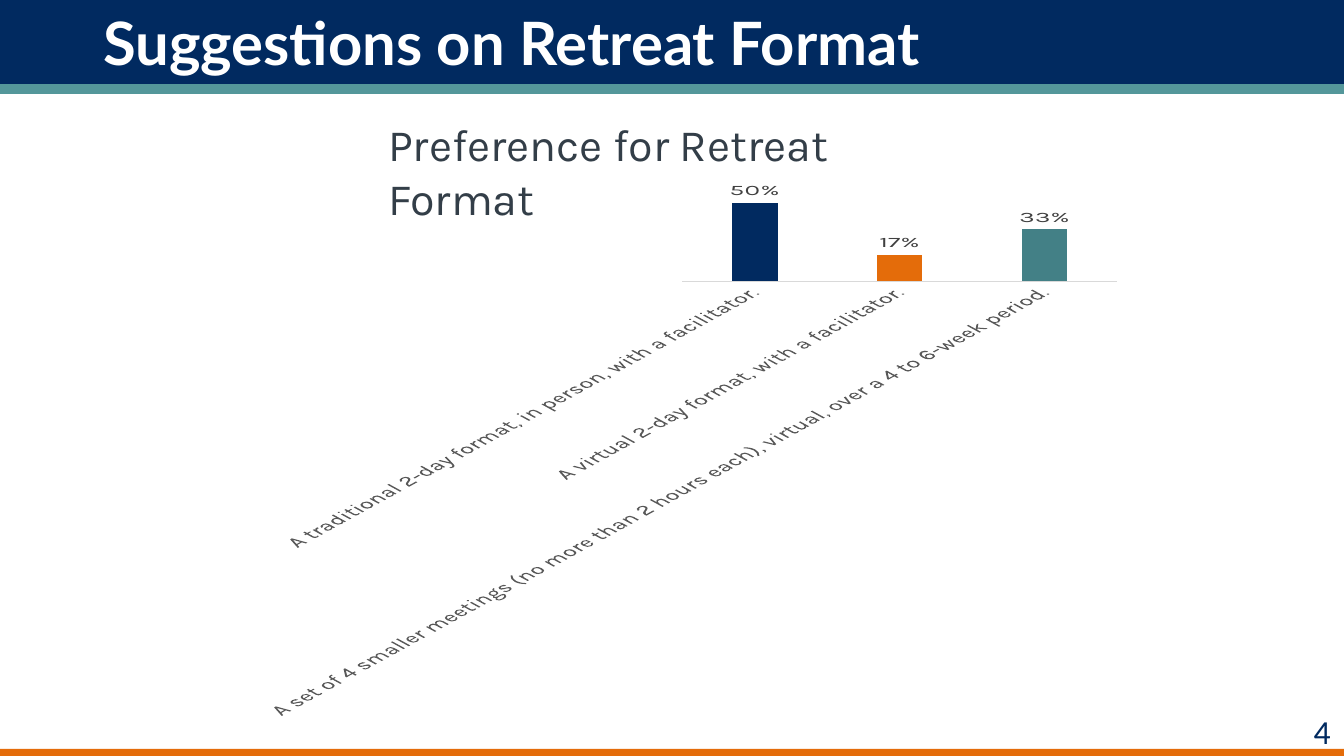
import pptx
import pptx.util
import pptx.dml.color
import pptx.chart.data
import pptx.enum.chart
import pptx.enum.shapes
import pptx.enum.text

NAVY, TEAL, ORANGE = "012A60", "54979A", "E46C0A"
WIDE, HIGH = 1344, 756
BANDS = [
    (0, 84, NAVY),
    (84, 10, TEAL),
    (749, 7, ORANGE),
]
TEXTS = [
    ("Suggestions on Retreat Format", (90, 0, 1203, 84),
     dict(size=32, font="Lato", color="FFFFFF", bold=True, anchor="MIDDLE")),
    ("Preference for Retreat Format", (375, 110, 594, 67),
     dict(size=24, font="Karla", color="333E48")),
    ("4", (1266, 704, 78, 54),
     dict(size=18, font="Calibri", color=NAVY, align="RIGHT")),
]
BARS = [
    ("A traditional 2-day format, in person, with a facilitator.", 0.5, NAVY),
    ("A virtual 2-day format, with a facilitator.", 0.17, ORANGE),
    ("A set of 4 smaller meetings (no more than 2 hours each), virtual, "
     "over a 4 to 6-week period.", 0.33, "438086"),
]
PLACE = (195, 181, 941, 538)


def px(n):
    return round(n * 914400 / 134.4)


def rgb(code):
    return pptx.dml.color.RGBColor.from_string(code)


def paint(fill, code):
    fill.solid()
    fill.fore_color.rgb = rgb(code)


def style(font, size, name, color, bold=False):
    font.size = pptx.util.Pt(size)
    font.name = name
    font.bold = bold
    font.color.rgb = rgb(color)


def write(slide, text, place, size, font, color, bold=False, align="LEFT", anchor="TOP"):
    frame = slide.shapes.add_textbox(*map(px, place)).text_frame
    frame.word_wrap = True
    frame.vertical_anchor = pptx.enum.text.MSO_ANCHOR[anchor]
    para = frame.paragraphs[0]
    para.alignment = pptx.enum.text.PP_ALIGN[align]
    run = para.add_run()
    run.text = text
    style(run.font, size, font, color, bold)


def band(slide, top, tall, color):
    shape = slide.shapes.add_shape(
        pptx.enum.shapes.MSO_SHAPE.RECTANGLE, 0, px(top), px(WIDE), px(tall))
    shape.shadow.inherit = False
    paint(shape.fill, color)
    shape.line.fill.background()


def graph(slide):
    kinds = pptx.enum.chart
    data = pptx.chart.data.CategoryChartData(number_format="0%")
    data.categories = [name for name, _, _ in BARS]
    data.add_series("Series 1", [value for _, value, _ in BARS])
    chart = slide.shapes.add_chart(
        kinds.XL_CHART_TYPE.COLUMN_CLUSTERED, *map(px, PLACE), data).chart
    chart.has_legend = False
    chart.has_title = False
    style(chart.font, 14, "Karla", "000000")

    axis = chart.category_axis
    axis.major_tick_mark = kinds.XL_TICK_MARK.NONE
    axis.format.line.color.rgb = rgb("D9D9D9")
    axis.format.line.width = pptx.util.Pt(0.75)
    style(axis.tick_labels.font, 14, "Karla", "595959")
    axis._element.txPr.bodyPr.set("rot", "-60000000")
    chart.value_axis.has_major_gridlines = False
    chart.value_axis.visible = False

    plot = chart.plots[0]
    plot.vary_by_categories = False
    plot.gap_width = 219
    plot.overlap = -27
    series = plot.series[0]
    paint(series.format.fill, NAVY)
    for i, (_, _, color) in enumerate(BARS):
        paint(series.points[i].format.fill, color)
    labels = series.data_labels
    labels.show_value = True
    labels.position = kinds.XL_LABEL_POSITION.OUTSIDE_END
    labels.number_format = "0%"
    labels.number_format_is_linked = False
    style(labels.font, 14, "Karla", "404040")


def main():
    deck = pptx.Presentation()
    deck.slide_width, deck.slide_height = px(WIDE), px(HIGH)
    slide = deck.slides.add_slide(deck.slide_layouts[6])
    for top, tall, color in BANDS:
        band(slide, top, tall, color)
    for text, place, form in TEXTS:
        write(slide, text, place, **form)
    graph(slide)
    deck.save("out.pptx")


if __name__ == "__main__":
    main()
